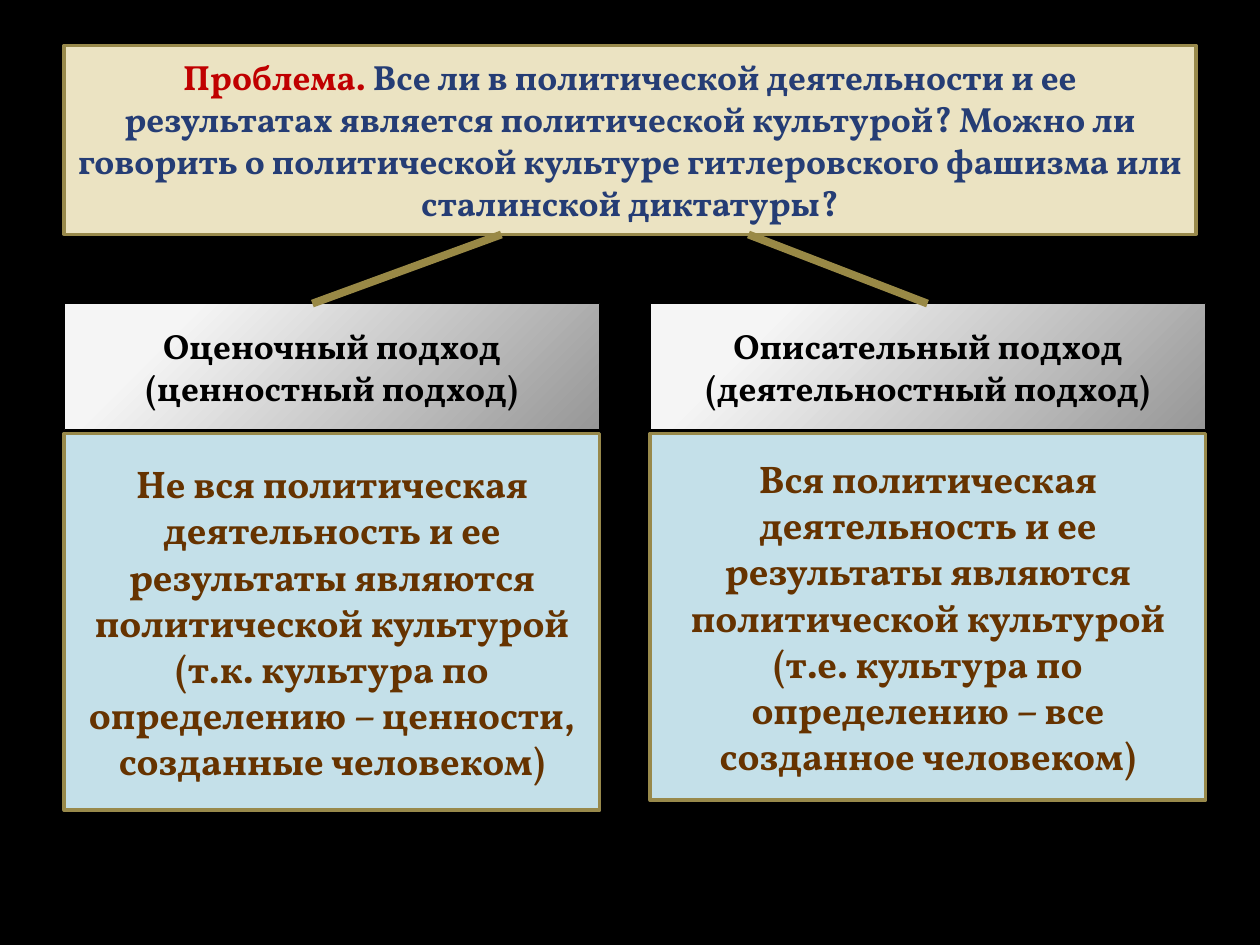
from lxml.etree import SubElement
from pptx import Presentation
from pptx.dml.color import RGBColor
from pptx.enum.shapes import MSO_CONNECTOR, MSO_SHAPE
from pptx.enum.text import MSO_ANCHOR, PP_ALIGN
from pptx.oxml import parse_xml
from pptx.oxml.ns import nsdecls, qn
from pptx.util import Pt

HEX = {
    "back": "000000", "sand": "EBE3C2", "sky": "C4E0E9", "gold": "98894B",
    "link": "998946", "red": "C00000", "navy": "253D75", "brown": "663300",
    "black": "000000", "light": "F5F5F5", "dark": "979797",
}
HEAD = 72
TOP = 173.5
BODY = 247.7
SIDES = [
    {
        "left": 36.7, "wide": 306, "tall": 215.3,
        "head": ["Оценочный подход", "(ценностный подход)"],
        "body": "Не вся политическая деятельность и ее результаты являются "
                "политической культурой (т.к. культура по определению – "
                "ценности, созданные человеком)",
        "link": (286.5, 178.5),
    },
    {
        "left": 371.5, "wide": 317.5, "tall": 209.5,
        "head": ["Описательный подход (деятельностный подход)"],
        "body": "Вся политическая деятельность и ее результаты являются "
                "политической культурой (т.е. культура по определению – "
                "все созданное человеком)",
        "link": (427.7, 530),
    },
]


def tint(name):
    return RGBColor.from_string(HEX[name])


def shade(fill):
    """Fill with a round gradient that spreads from the top left corner."""
    fill.gradient()
    for stop, (place, name) in zip(fill.gradient_stops, [(0.2, "light"), (1, "dark")]):
        stop.position = place
        stop.color.rgb = tint(name)


def spread(shape):
    """Turn the straight gradient into a circular one and add a soft shadow."""
    props = shape.element.spPr
    grad = props.find(qn("a:gradFill"))
    grad.remove(grad.find(qn("a:lin")))
    ring = SubElement(grad, qn("a:path"), path="circle")
    SubElement(ring, qn("a:fillToRect"), l="-15000", t="-15000", r="115000", b="115000")
    props.find(qn("a:effectLst")).append(parse_xml(
        f'<a:outerShdw {nsdecls("a")} blurRad="101600" dist="129540" dir="2700000">'
        f'<a:srgbClr val="{HEX["black"]}"><a:alpha val="35000"/></a:srgbClr>'
        '</a:outerShdw>'))


def panel(slide, box, paras, size, fill=None, edge="gold", width=2):
    """Add a box; paras is a list of lists of (text, colour) runs."""
    shape = slide.shapes.add_shape(MSO_SHAPE.RECTANGLE, *map(Pt, box))
    shape.shadow.inherit = False
    if fill:
        shape.fill.solid()
        shape.fill.fore_color.rgb = tint(fill)
    else:
        shade(shape.fill)
        spread(shape)
    shape.line.color.rgb = tint(edge)
    shape.line.width = Pt(width)
    frame = shape.text_frame
    frame.word_wrap = True
    frame.vertical_anchor = MSO_ANCHOR.MIDDLE
    style = {"name": "Vollkorn", "size": Pt(size), "bold": True}
    for spot, runs in enumerate(paras):
        para = frame.add_paragraph() if spot else frame.paragraphs[0]
        para.alignment = PP_ALIGN.CENTER
        for text, name in runs:
            run = para.add_run()
            run.text = text
            for key, value in style.items():
                setattr(run.font, key, value)
            run.font.color.rgb = tint(name)


def column(slide, side):
    left, wide = side["left"], side["wide"]
    panel(slide, (left, TOP, wide, HEAD), [[(line, "black")] for line in side["head"]],
          20, edge="black", width=0.75)
    panel(slide, (left, BODY, wide, side["tall"]), [[(side["body"], "brown")]], 22, "sky")


def branch(slide, start, end):
    line = slide.shapes.add_connector(MSO_CONNECTOR.STRAIGHT, *map(Pt, start + end))
    line.line.color.rgb = tint("link")
    line.line.width = Pt(4.5)
    SubElement(line.element.spPr, qn("a:effectLst"))


def main():
    deck = Presentation()
    deck.slide_width, deck.slide_height = Pt(720), Pt(540)
    slide = deck.slides.add_slide(deck.slide_layouts[6])
    back = slide.background.fill
    back.solid()
    back.fore_color.rgb = tint("back")

    query = [
        ("Проблема. ", "red"),
        ("Все ли в политической деятельности и ее результатах является "
         "политической культурой? Можно ли говорить о политической культуре "
         "гитлеровского фашизма или сталинской диктатуры?", "navy"),
    ]
    box = (36.7, 26, 646.6, 108)
    panel(slide, box, [query], 20, "sand")
    for side in SIDES:
        column(slide, side)
    for side in SIDES:
        start, end = side["link"]
        branch(slide, (start, box[1] + box[3]), (end, TOP))
    deck.save("out.pptx")


if __name__ == "__main__":
    main()
